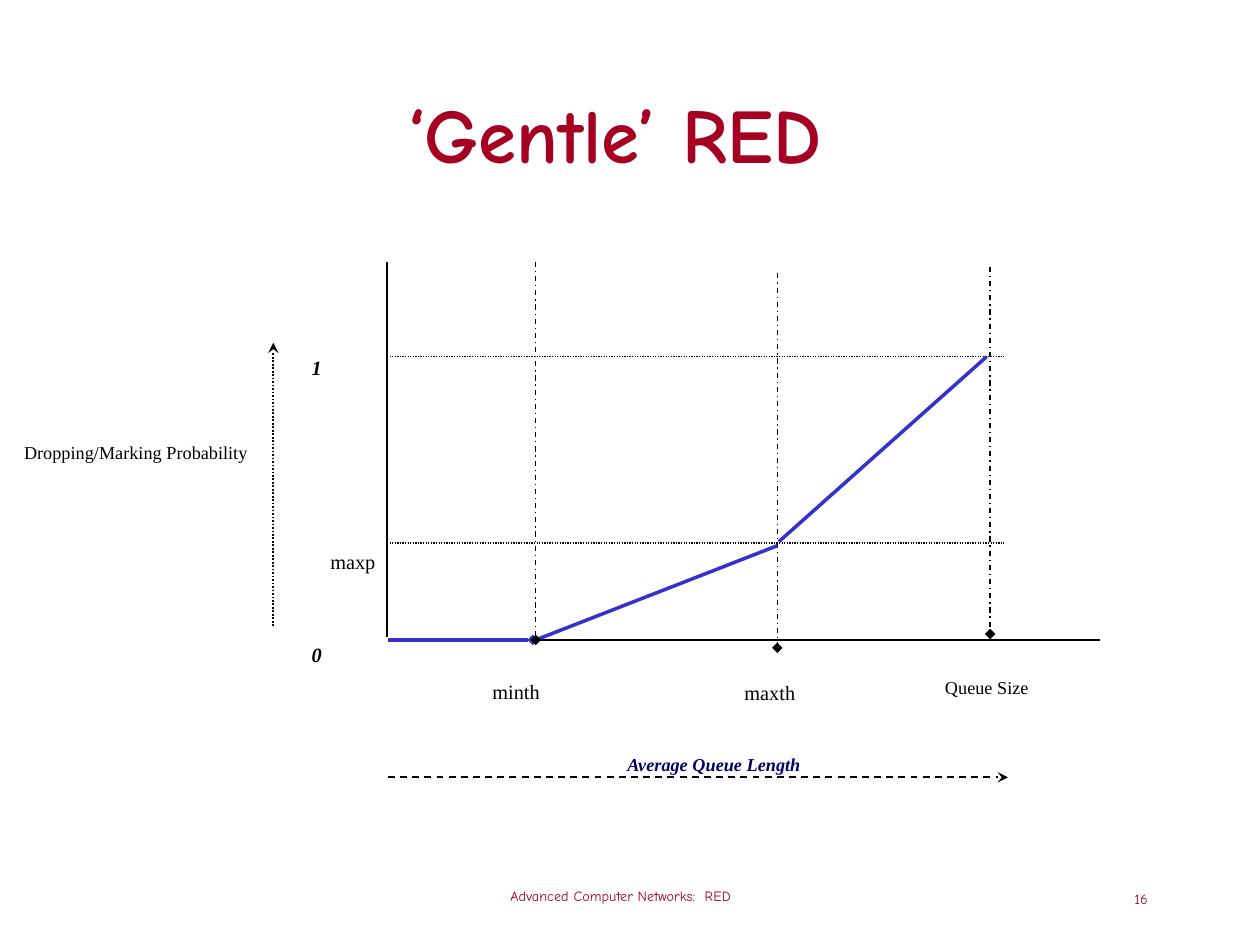
from typing import NamedTuple, Optional

from lxml.etree import SubElement
from pptx import Presentation
from pptx.dml.color import RGBColor
from pptx.enum.dml import MSO_LINE_DASH_STYLE as Dash
from pptx.enum.shapes import MSO_CONNECTOR
from pptx.enum.text import MSO_ANCHOR as Anchor, MSO_AUTO_SIZE as AutoSize, PP_ALIGN as Align
from pptx.oxml.ns import qn
from pptx.util import Cm, Pt

BLACK = RGBColor(0x00, 0x00, 0x00)
CRIMSON = RGBColor(0xA5, 0x00, 0x21)
BLUE = RGBColor(0x33, 0x33, 0xCC)
NAVY = RGBColor(0x00, 0x00, 0x66)
COMIC = "Comic Neue"
TIMES = "Times New Roman"

AXIS_X, AXIS_TOP, ZERO_Y = 7.8, 5.28, 12.9
MIN_X, MAX_X, QUEUE_X = 10.8, 15.67, 19.96
MAXP_Y, ONE_Y = 10.95, 7.19
GRID_RIGHT = 20.24


class Box(NamedTuple):
    left: float
    top: float
    width: float
    height: float


class Line(NamedTuple):
    start: tuple[float, float]
    end: tuple[float, float]
    width: float = 0.75
    color: RGBColor = BLACK
    dash: Optional[Dash] = None
    arrow: Optional[str] = None


class Label(NamedTuple):
    text: str
    box: Box
    size: int = 20
    align: Align = Align.CENTER


LINES = [
    Line((9.73, ZERO_Y), (22.17, ZERO_Y), 1.25),
    Line((AXIS_X, AXIS_TOP), (AXIS_X, 12.85), 1.25),
    *(Line((AXIS_X, y), (GRID_RIGHT, y), dash=Dash.ROUND_DOT) for y in (MAXP_Y, ONE_Y)),
    Line((MAX_X, 5.51), (MAX_X, 13.06), dash=Dash.DASH_DOT, arrow="diamond"),
    Line((7.82, ZERO_Y), (10.74, ZERO_Y), 2, BLUE, arrow="diamond"),
    Line((MIN_X, ZERO_Y), (MAX_X, 11), 2, BLUE),
    Line((15.7, 10.92), (19.89, ONE_Y), 2, BLUE),
    Line((7.82, 15.67), (20.32, 15.67), 1, dash=Dash.DASH, arrow="stealth"),
    Line((QUEUE_X, 5.38), (QUEUE_X, 12.78), dash=Dash.DASH_DOT, arrow="diamond"),
    Line((5.51, 12.62), (5.51, 6.91), 1, dash=Dash.ROUND_DOT, arrow="stealth"),
    Line((MIN_X, AXIS_TOP), (MIN_X, ZERO_Y), dash=Dash.DASH_DOT, arrow="diamond"),
]

LABELS = [
    Label("minth", Box(7.09, 13.21, 6.63, 0.84)),
    Label("maxth", Box(12.27, 13.23, 6.5, 0.84)),
    Label("maxp", Box(3.38, 10.59, 4.19, 0.84), align=Align.RIGHT),
    Label("Dropping/Marking Probability", Box(0.2, 8.46, 5.08, 1.52), 18),
    Label("Queue Size", Box(19.05, 13.21, 5.08, 0.76), 18, Align.LEFT),
]


def add_line(slide, line: Line) -> None:
    points = [Cm(value) for value in (*line.start, *line.end)]
    connector = slide.shapes.add_connector(MSO_CONNECTOR.STRAIGHT, *points)
    connector.line.width = Pt(line.width)
    connector.line.color.rgb = line.color
    if line.dash:
        connector.line.dash_style = line.dash
    if line.arrow:
        SubElement(connector.line._get_or_add_ln(), qn("a:tailEnd"), type=line.arrow)
    SubElement(connector._element.spPr, qn("a:effectLst"))


def add_text(slide, text: str, box: Box, *, size: int, font: str = TIMES,
             color: RGBColor = BLACK, bold: bool = False, italic: bool = False,
             align: Align = Align.CENTER, anchor: Anchor = Anchor.TOP,
             margins: tuple[float, float] = (0.25, 0.13), wrap: bool = True,
             grow: bool = False, lowered: bool = True) -> None:
    shape = slide.shapes.add_textbox(*(Cm(value) for value in box))
    frame = shape.text_frame
    frame.word_wrap = wrap
    frame.auto_size = AutoSize.SHAPE_TO_FIT_TEXT if grow else AutoSize.NONE
    frame.vertical_anchor = anchor
    frame.margin_left = frame.margin_right = Cm(margins[0])
    frame.margin_top = frame.margin_bottom = Cm(margins[1])
    paragraph = frame.paragraphs[0]
    paragraph.alignment = align
    run = paragraph.add_run()
    run.text = text
    run.font.name = font
    run.font.size = Pt(size)
    run.font.bold = bold
    run.font.italic = italic
    run.font.color.rgb = color
    if lowered:
        run._r.get_or_add_rPr().set("baseline", "-25000")


def main() -> None:
    presentation = Presentation()
    presentation.slide_width = Cm(25.4)
    presentation.slide_height = Cm(19.05)
    slide = presentation.slides.add_slide(presentation.slide_layouts[6])

    add_text(slide, "‘Gentle’ RED", Box(1.3, 1.12, 22.2, 3.1), size=44, font=COMIC,
             color=CRIMSON, bold=True, anchor=Anchor.MIDDLE, lowered=False)
    for line in LINES:
        add_line(slide, line)
    for text, top in (("1", 6.55), ("0", 12.34)):
        add_text(slide, text, Box(5.33, top, 2.11, 1.09), size=20,
                 bold=True, italic=True, grow=True)
    add_text(slide, "Average Queue Length", Box(8.03, 14.63, 12.73, 1.02), size=18,
             color=NAVY, bold=True, italic=True, grow=True)
    for label in LABELS:
        add_text(slide, label.text, label.box, size=label.size, align=label.align,
                 margins=(0, 0), grow=True)
    for text, box, align in (
        ("Advanced Computer Networks:  RED", Box(7.97, 17.35, 9.09, 1.07), Align.CENTER),
        ("16", Box(18.11, 17.32, 5.28, 1.27), Align.RIGHT),
    ):
        add_text(slide, text, box, size=14, font=COMIC, color=CRIMSON, align=align,
                 anchor=Anchor.MIDDLE, wrap=False)

    presentation.save("out.pptx")


if __name__ == "__main__":
    main()
